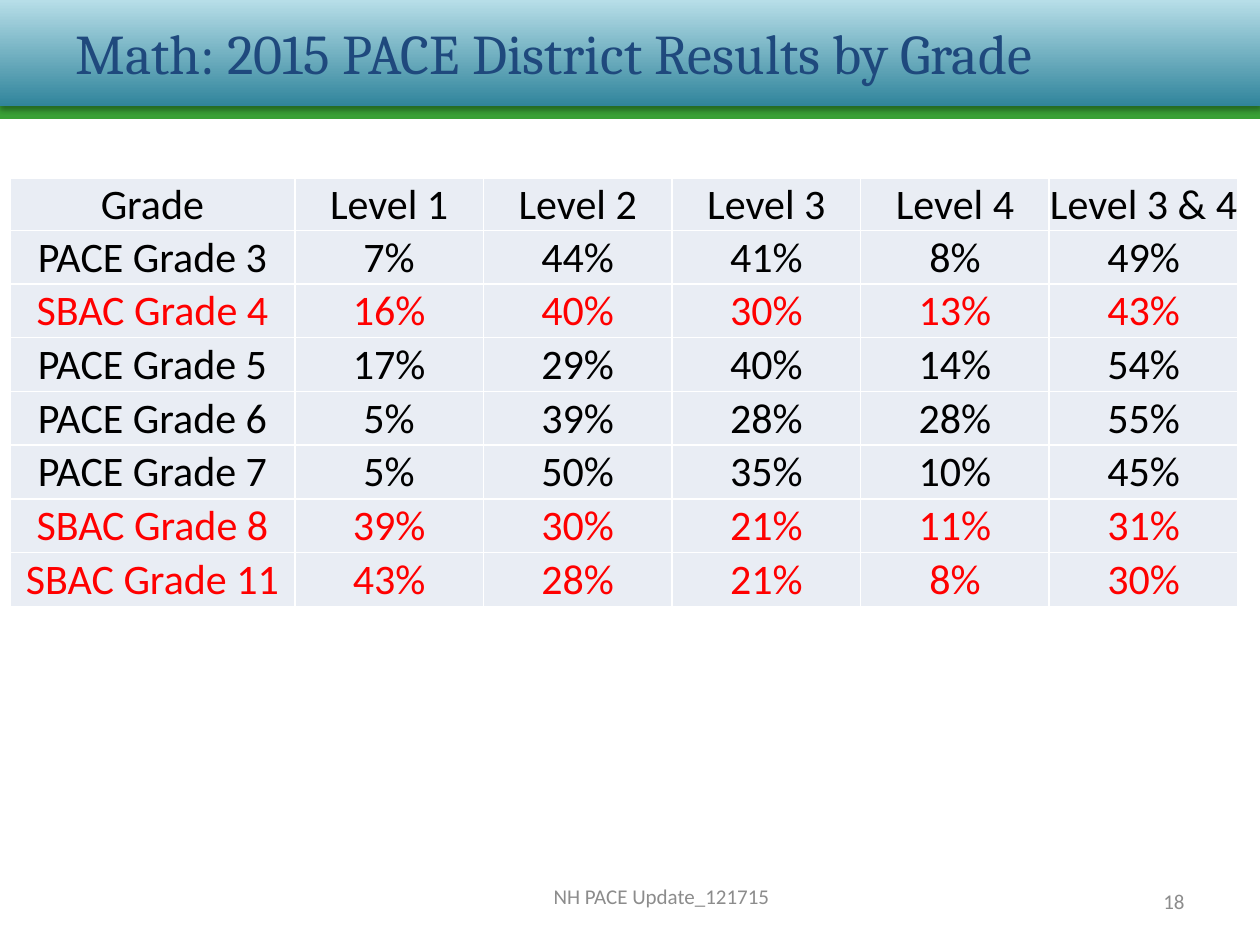
from lxml import etree
from pptx import Presentation, util as u
from pptx.dml.color import RGBColor
from pptx.enum import shapes, text
from pptx.oxml import parse_xml
from pptx.oxml.ns import nsdecls, qn

WIDE, HIGH = u.Inches(10), u.Inches(7.5)
MID = text.MSO_ANCHOR.MIDDLE
LEFT, RIGHT, CENTER = text.PP_ALIGN.LEFT, text.PP_ALIGN.RIGHT, text.PP_ALIGN.CENTER
BLACK, RED, WHITE, GRAY = "000000", "FF0000", "FFFFFF", "8C8C8C"
COLS = [22.6] + [14.97] * 5
ROWS = [4.53] + [5.69] * 7
DATA = [
    ["Grade", "Level 1", "Level 2", "Level 3", "Level 4", "Level 3 & 4"],
    ["PACE Grade 3", "7%", "44%", "41%", "8%", "49%"],
    ["SBAC Grade 4", "16%", "40%", "30%", "13%", "43%"],
    ["PACE Grade 5", "17%", "29%", "40%", "14%", "54%"],
    ["PACE Grade 6", "5%", "39%", "28%", "28%", "55%"],
    ["PACE Grade 7", "5%", "50%", "35%", "10%", "45%"],
    ["SBAC Grade 8", "39%", "30%", "21%", "11%", "31%"],
    ["SBAC Grade 11", "43%", "28%", "21%", "8%", "30%"],
]


def rgb(code):
    return RGBColor.from_string(code)


def across(share):
    return int(WIDE * share / 100)


def down(share):
    return int(HIGH * share / 100)


def box(x, y, w, h):
    return across(x), down(y), across(w), down(h)


def write(frame, words, size, color, align, face="Calibri"):
    frame.text = words
    para = frame.paragraphs[0]
    para.alignment = align
    font = para.font
    font.size, font.name, font.color.rgb = u.Pt(size), face, rgb(color)


def band(slide, area):
    shape = slide.shapes.add_shape(shapes.MSO_SHAPE.RECTANGLE, *area)
    shape.shadow.inherit = False
    shape.line.fill.background()
    return shape


def blend(shape, low, high):
    fill = shape.fill
    fill.gradient()
    fill.gradient_angle = 90
    for stop, code in zip(fill.gradient_stops, (low, high)):
        stop.color.rgb = rgb(code)


def shade(shape):
    effect = shape.element.spPr.find(qn("a:effectLst"))
    effect.append(parse_xml(
        f'<a:outerShdw {nsdecls("a")} blurRad="{u.Pt(3.1)}" dist="{u.Pt(1.8)}" '
        'dir="5400000" rotWithShape="0"><a:srgbClr val="000000">'
        '<a:alpha val="35000"/></a:srgbClr></a:outerShdw>'))


def head(slide, words):
    title = slide.shapes.title
    title.left, title.top, title.width, title.height = box(5, 1.87, 89.2, 7.2)
    title.text_frame.vertical_anchor = MID
    write(title.text_frame, words, 32, "1F497D", LEFT, "Cambria")
    title.element.getparent().append(title.element)


def label(slide, area, words, align):
    frame = slide.shapes.add_textbox(*area).text_frame
    frame.word_wrap = True
    frame.vertical_anchor = MID
    write(frame, words, 12, GRAY, align)


def edge(cell):
    props = cell._tc.get_or_add_tcPr()
    for spot, side in enumerate(("lnL", "lnR", "lnT", "lnB")):
        line = etree.Element(qn(f"a:{side}"), w=str(u.Pt(1)))
        fill = etree.SubElement(line, qn("a:solidFill"))
        etree.SubElement(fill, qn("a:srgbClr"), val=WHITE)
        props.insert(spot, line)


def paint(cell, words, color):
    cell.fill.solid()
    cell.fill.fore_color.rgb = rgb("E9EDF4")
    cell.vertical_anchor = MID
    cell.margin_left = cell.margin_right = cell.margin_bottom = 0
    cell.margin_top = u.Inches(0.01)
    write(cell.text_frame, words, 24, color, CENTER)
    edge(cell)


def grid(slide):
    area = box(0.8, 18.9, sum(COLS), sum(ROWS))
    table = slide.shapes.add_table(len(ROWS), len(COLS), *area).table
    for col, share in zip(table.columns, COLS):
        col.width = across(share)
    for row, share, items in zip(table.rows, ROWS, DATA):
        row.height = down(share)
        color = RED if items[0].startswith("SBAC") else BLACK
        for cell, words in zip(row.cells, items):
            paint(cell, words, color)


def main():
    deck = Presentation()
    deck.slide_width, deck.slide_height = WIDE, HIGH
    slide = deck.slides.add_slide(deck.slide_layouts[5])
    strip = band(slide, box(0, 9.9, 100, 2.7))
    strip.fill.solid()
    strip.fill.fore_color.rgb = rgb("39A036")
    banner = band(slide, box(0, 0, 100, 11.2))
    blend(banner, "31859C", "B7DEE8")
    shade(banner)
    head(slide, "Math: 2015 PACE District Results by Grade")
    label(slide, box(83.3, 92.67, 11.7, 5.33), "18", RIGHT)
    label(slide, box(23.35, 92.2, 58.3, 5.33), "NH PACE Update_121715", CENTER)
    grid(slide)
    deck.save("out.pptx")


if __name__ == "__main__":
    main()
